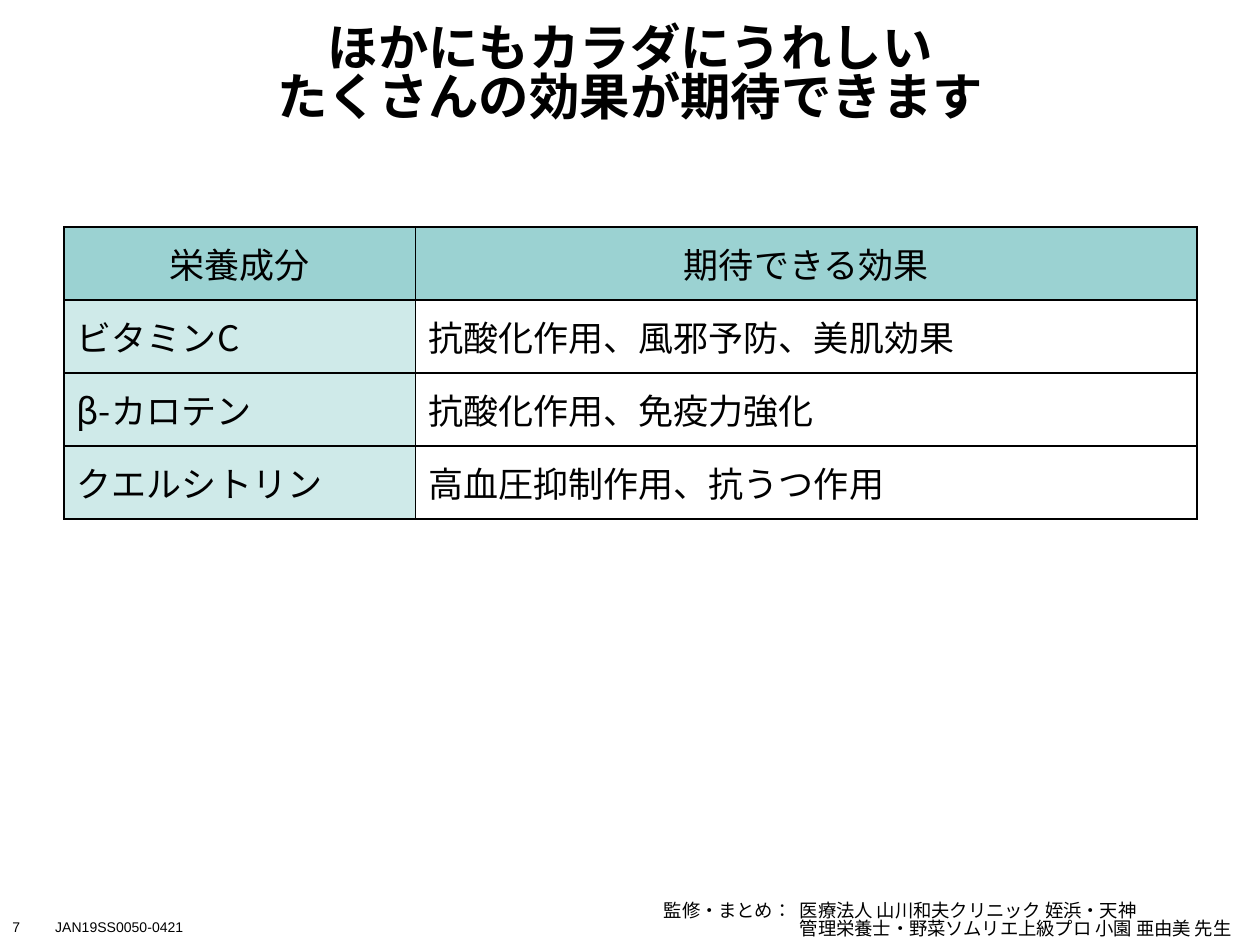
from lxml.etree import SubElement
from pptx import Presentation
from pptx.dml.color import RGBColor
from pptx.enum.lang import MSO_LANGUAGE_ID as Language
from pptx.enum.text import MSO_ANCHOR as Anchor, PP_ALIGN as Align
from pptx.oxml.ns import qn
from pptx.util import Inches, Pt

BLACK = RGBColor(0x00, 0x00, 0x00)
HEADER_TEAL = RGBColor(0x9B, 0xD2, 0xD2)
LABEL_TEAL = RGBColor(0xCF, 0xEA, 0xE9)
JAPANESE_FONT = "Noto Sans CJK JP"

TITLE = "ほかにもカラダにうれしい\vたくさんの効果が期待できます"
EFFECTS = [
    ("栄養成分", "期待できる効果"),
    ("ビタミンC", "抗酸化作用、風邪予防、美肌効果"),
    ("β-カロテン", "抗酸化作用、免疫力強化"),
    ("クエルシトリン", "高血圧抑制作用、抗うつ作用"),
]
CREDITS = [
    "監修・まとめ：\t医療法人 山川和夫クリニック 姪浜・天神",
    "\t管理栄養士・野菜ソムリエ上級プロ 小園 亜由美 先生",
]
FOOTERS = [("7", 0, 0.34), ("JAN19SS0050-0421", 0.34, 1.23)]
COLUMN_WIDTHS = (2.79, 6.2)
ROW_HEIGHT = 0.58
CREDIT_INDENT = Inches(1.08)

TITLE_FORMAT = {"size": Pt(28.8), "name": JAPANESE_FONT, "bold": True}
TABLE_FORMAT = {"size": Pt(20), "name": JAPANESE_FONT}
CREDIT_FORMAT = {"size": Pt(10.5), "name": JAPANESE_FONT}
FOOTER_FORMAT = {"size": Pt(8), "name": "Arial"}


def write(frame, lines, values, alignment=Align.LEFT, spacing=None):
    for index, line in enumerate(lines):
        paragraph = frame.paragraphs[0] if index == 0 else frame.add_paragraph()
        paragraph.text = line
        paragraph.alignment = alignment
        paragraph.line_spacing = spacing
        for run in paragraph.runs:
            for name, value in values.items():
                setattr(run.font, name, value)
            run.font.color.rgb = BLACK
            run.font.language_id = Language.JAPANESE
            SubElement(run.font._element, qn("a:ea"), typeface=values["name"])


def place(shape, left, top, width, height):
    box = {"left": left, "top": top, "width": width, "height": height}
    for name, value in box.items():
        setattr(shape, name, Inches(value))


def add_border(cell):
    properties = cell._tc.get_or_add_tcPr()
    for index, side in enumerate(("a:lnL", "a:lnR", "a:lnT", "a:lnB")):
        line = properties.makeelement(qn(side), {"w": str(Pt(1))})
        properties.insert(index, line)
        SubElement(SubElement(line, qn("a:solidFill")), qn("a:srgbClr"), val=str(BLACK))


def add_effects_table(slide):
    size = (len(EFFECTS), len(COLUMN_WIDTHS))
    table = slide.shapes.add_table(
        *size, Inches(0.51), Inches(1.8),
        Inches(sum(COLUMN_WIDTHS)), Inches(ROW_HEIGHT * len(EFFECTS))).table
    for column, width in zip(table.columns, COLUMN_WIDTHS):
        column.width = Inches(width)
    for row_index, row in enumerate(EFFECTS):
        for column_index, text in enumerate(row):
            cell = table.cell(row_index, column_index)
            header = row_index == 0
            write(cell.text_frame, [text], TABLE_FORMAT,
                  Align.CENTER if header else Align.LEFT)
            cell.vertical_anchor = Anchor.MIDDLE
            if header or column_index == 0:
                cell.fill.solid()
                cell.fill.fore_color.rgb = HEADER_TEAL if header else LABEL_TEAL
            else:
                cell.fill.background()
            add_border(cell)


def main():
    presentation = Presentation()
    presentation.slide_width, presentation.slide_height = Inches(10), Inches(7.5)
    slide = presentation.slides.add_slide(presentation.slide_layouts[5])

    title = slide.shapes.title
    place(title, 0.97, 0.02, 8.06, 1.07)
    frame = title.text_frame
    frame.margin_top, frame.margin_bottom = Inches(0.14), Inches(0.04)
    frame.vertical_anchor = Anchor.MIDDLE
    write(frame, [TITLE], TITLE_FORMAT, Align.CENTER, 0.82)

    add_effects_table(slide)

    for text, left, width in FOOTERS:
        footer = slide.shapes.add_textbox(
            Inches(left), Inches(7.24), Inches(width), Inches(0.24))
        write(footer.text_frame, [text], FOOTER_FORMAT)

    credit = slide.shapes.add_textbox(
        Inches(5.17), Inches(7.05), Inches(4.83), Inches(0.45))
    credit.text_frame.vertical_anchor = Anchor.BOTTOM
    write(credit.text_frame, CREDITS, CREDIT_FORMAT, spacing=0.82)
    for paragraph in credit.text_frame.paragraphs:
        properties = paragraph._p.get_or_add_pPr()
        properties.set("marL", str(CREDIT_INDENT))
        properties.set("indent", str(-CREDIT_INDENT))

    presentation.save("out.pptx")


if __name__ == "__main__":
    main()
